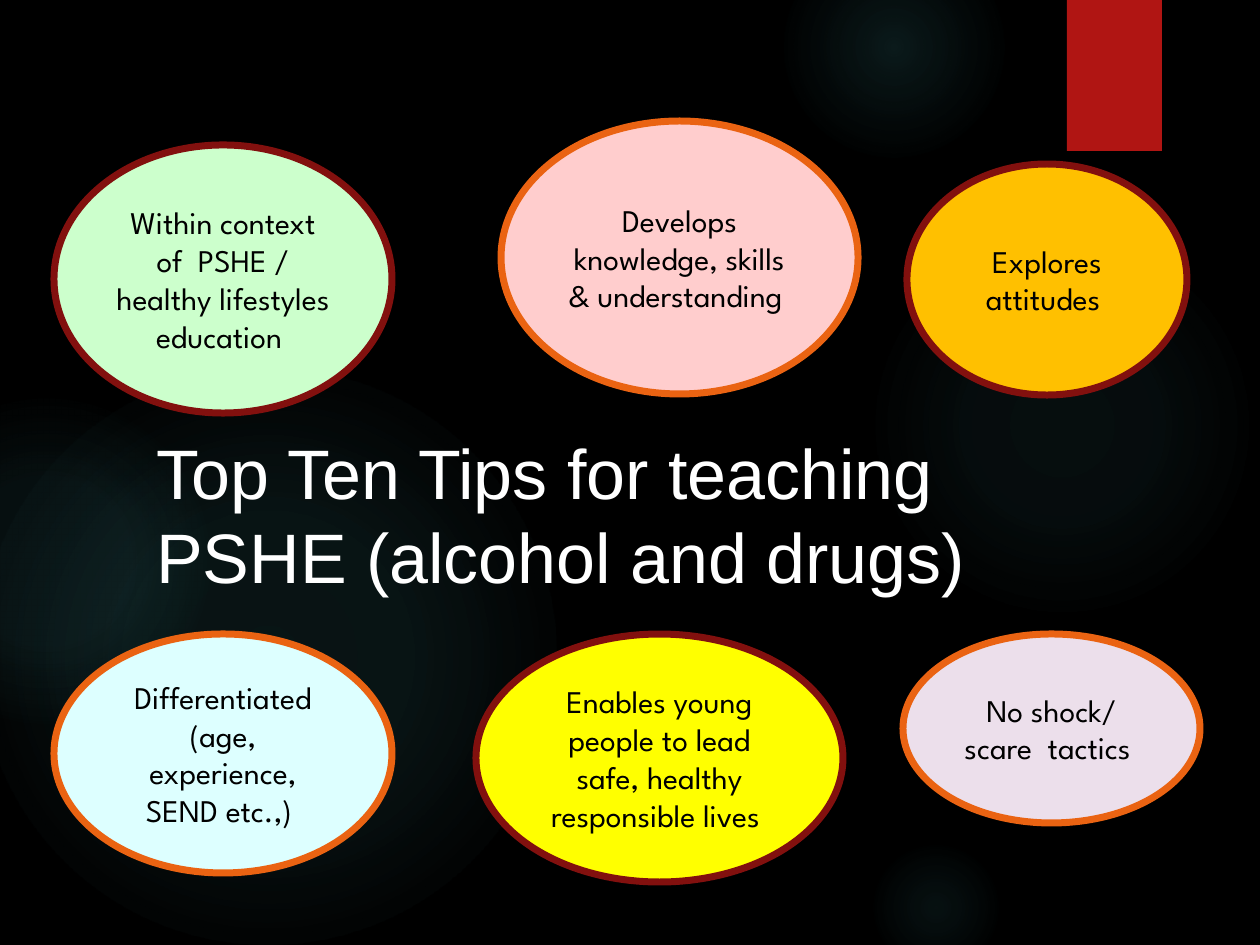
from dataclasses import dataclass

import pptx
import pptx.dml.color
import pptx.enum.shapes
import pptx.enum.text
import pptx.oxml
import pptx.oxml.ns
import pptx.util

EMU_PER_PX = 914400 / 126
SHAPE = pptx.enum.shapes.MSO_SHAPE
MAROON, ORANGE = "82100E", "EA6312"
GLOW_COLOUR = "50B9C1"


@dataclass
class Glow:
    x: int
    y: int
    size: int
    stops: tuple[tuple[int, int], ...]  # (position %, opacity %)


@dataclass
class Tip:
    x: int
    y: int
    w: int
    h: int
    fill: str
    line: str
    text: str


GLOWS = [
    Glow(868, 231, 388, ((0, 7), (36, 6), (69, 0))),
    Glow(784, -63, 220, ((0, 14), (36, 7), (73, 0))),
    Glow(868, 840, 136, ((0, 9), (36, 5), (66, 0))),
    Glow(-21, 368, 577, ((0, 11), (36, 10), (75, 0))),
    Glow(-116, 399, 325, ((0, 8), (36, 8), (72, 0))),
]

TIPS = [
    Tip(54, 145, 338, 268, "CCFFCC", MAROON,
        "Within context of  PSHE / healthy lifestyles education "),
    Tip(501, 121, 357, 273, "FFCDCD", ORANGE,
        "Develops knowledge, skills & understanding "),
    Tip(907, 164, 280, 231, "FFC000", MAROON, "Explores attitudes "),
    Tip(54, 634, 338, 239, "DDFFFF", ORANGE,
        "Differentiated (age, experience, SEND etc.,) "),
    Tip(476, 634, 367, 248, "FFFF00", MAROON,
        "Enables young people to lead safe, healthy responsible lives "),
    Tip(903, 634, 297, 189, "ECDFEB", ORANGE, "No shock/ scare  tactics "),
]


def px(n: int) -> int:
    return round(n * EMU_PER_PX)


def rgb(colour: str) -> pptx.dml.color.RGBColor:
    return pptx.dml.color.RGBColor.from_string(colour)


def add_shape(slide, kind, x: int, y: int, w: int, h: int, fill: str):
    """Add a flat shape without outline or shadow."""
    s = slide.shapes.add_shape(kind, px(x), px(y), px(w), px(h))
    s.shadow.inherit = False
    s.fill.solid()
    s.fill.fore_color.rgb = rgb(fill)
    s.line.fill.background()
    return s


def set_text(s, text: str, font: str, size: int, colour: str):
    tf = s.text_frame
    tf.word_wrap = True
    p = tf.paragraphs[0]
    p.text = text
    p.font.name = font
    p.font.size = pptx.util.Pt(size)
    p.font.color.rgb = rgb(colour)
    return p


def add_glow(slide, glow: Glow) -> None:
    """Add a circle that fades from its centre to transparent."""
    s = add_shape(slide, SHAPE.OVAL, glow.x, glow.y, glow.size, glow.size, GLOW_COLOUR)
    stops = "".join(
        f'<a:gs pos="{pos * 1000}"><a:srgbClr val="{GLOW_COLOUR}">'
        f'<a:alpha val="{alpha * 1000}"/></a:srgbClr></a:gs>'
        for pos, alpha in glow.stops
    )
    gradient = pptx.oxml.parse_xml(
        f'<a:gradFill {pptx.oxml.ns.nsdecls("a")} rotWithShape="1">'
        f'<a:gsLst>{stops}</a:gsLst><a:path path="circle">'
        '<a:fillToRect l="50000" t="50000" r="50000" b="50000"/></a:path></a:gradFill>'
    )
    sp_pr = s._element.spPr
    sp_pr.replace(sp_pr.find(pptx.oxml.ns.qn("a:solidFill")), gradient)


def add_tip(slide, tip: Tip) -> None:
    s = add_shape(slide, SHAPE.OVAL, tip.x, tip.y, tip.w, tip.h, tip.fill)
    s.line.color.rgb = rgb(tip.line)
    s.line.width = pptx.util.Pt(4)
    s.text_frame.vertical_anchor = pptx.enum.text.MSO_ANCHOR.MIDDLE
    p = set_text(s, tip.text, "League Spartan", 18, "000000")
    p.alignment = pptx.enum.text.PP_ALIGN.CENTER


def main() -> None:
    prs = pptx.Presentation()
    prs.slide_width, prs.slide_height = px(1260), px(945)
    slide = prs.slides.add_slide(prs.slide_layouts[6])
    slide.background.fill.solid()
    slide.background.fill.fore_color.rgb = rgb("000000")

    for glow in GLOWS:
        add_glow(slide, glow)
    add_shape(slide, SHAPE.RECTANGLE, 1067, 0, 95, 151, "B01513")

    title = slide.shapes.add_textbox(px(144), px(423), px(973), px(183))
    set_text(title, "Top Ten Tips for teaching PSHE (alcohol and drugs)",
             "Arial", 40, "FFFFFF")
    for tip in TIPS:
        add_tip(slide, tip)
    prs.save("out.pptx")


if __name__ == "__main__":
    main()
